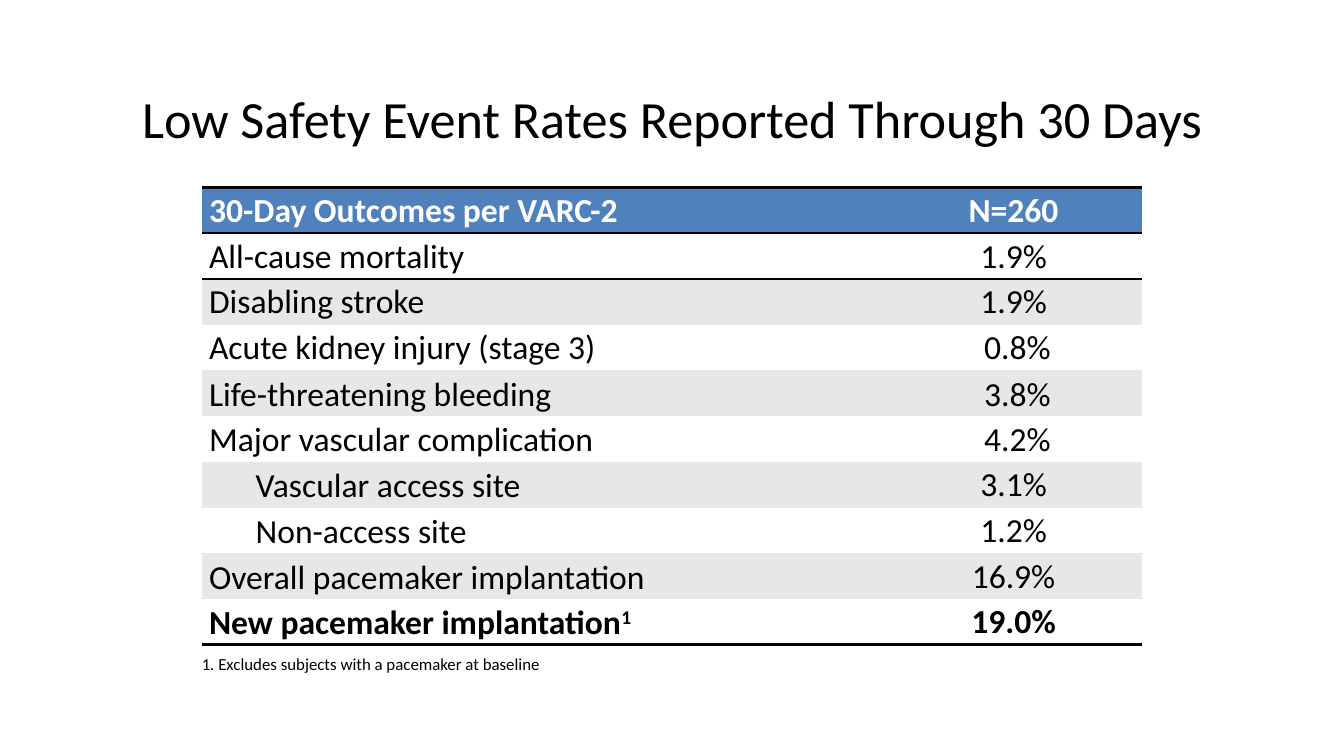
from pptx import Presentation
from pptx.dml.color import RGBColor
from pptx.enum.text import MSO_ANCHOR, PP_ALIGN
from pptx.oxml.ns import qn
from pptx.util import Pt
from lxml import etree

PX = 6350  # 144 px to the inch
LEFT, CENTER = PP_ALIGN.LEFT, PP_ALIGN.CENTER
TOP, MIDDLE = MSO_ANCHOR.TOP, MSO_ANCHOR.MIDDLE
BLACK, WHITE, BLUE, GREY = "000000", "FFFFFF", "4F81BD", "E7E7E7"


def write(frame, text, size=18, color=BLACK, bold=False, align=LEFT,
          spacing=None, indent=0, superscript=""):
    paragraph = frame.paragraphs[0]
    paragraph.alignment = align
    if spacing:
        paragraph.line_spacing = spacing
    if indent:
        paragraph._p.get_or_add_pPr().set("marL", str(indent * PX))
    for part in filter(None, (text, superscript)):
        run = paragraph.add_run()
        run.text = part
        run.font.name = "Calibri"
        run.font.size = Pt(size)
        run.font.bold = bold
        run.font.color.rgb = RGBColor.from_string(color)
    if superscript:
        run.font._element.set("baseline", "30000")


def set_borders(cell, top, bottom):
    properties = cell._tc.get_or_add_tcPr()
    for side, width in (("lnL", 0), ("lnR", 0), ("lnT", top), ("lnB", bottom)):
        line = etree.SubElement(properties, qn(f"a:{side}"), w=str(Pt(width)))
        if width:
            fill = etree.SubElement(line, qn("a:solidFill"))
            etree.SubElement(fill, qn("a:srgbClr"), val=BLACK)
        else:
            etree.SubElement(line, qn("a:noFill"))


prs = Presentation()
prs.slide_width, prs.slide_height = 1440 * PX, 810 * PX
slide = prs.slides.add_slide(prs.slide_layouts[6])

# Title
title = slide.shapes.add_textbox(72 * PX, 58 * PX, 1296 * PX, 135 * PX).text_frame
title.word_wrap = True
title.vertical_anchor = MIDDLE
write(title, "Low Safety Event Rates Reported Through 30 Days", size=28, align=CENTER)

# Outcomes: label, rate, label indent, label anchor, rate anchor, superscript
outcomes = [
    ("30-Day Outcomes per VARC-2", "N=260", 0, TOP, TOP, ""),
    ("All-cause mortality", "1.9%", 0, TOP, TOP, ""),
    ("Disabling stroke", "1.9%", 0, TOP, TOP, ""),
    ("Acute kidney injury (stage 3)", " 0.8%", 0, TOP, TOP, ""),
    ("Life-threatening bleeding", " 3.8%", 0, MIDDLE, MIDDLE, ""),
    ("Major vascular complication", " 4.2%", 0, MIDDLE, MIDDLE, ""),
    ("Vascular access site", "3.1%", 50, MIDDLE, TOP, ""),
    ("Non-access site", "1.2%", 50, MIDDLE, TOP, ""),
    ("Overall pacemaker implantation", "16.9%", 0, MIDDLE, TOP, ""),
    ("New pacemaker implantation", "19.0%", 0, MIDDLE, TOP, "1"),
]
last = len(outcomes) - 1
rule_widths = {0: 2, 1: 1, 2: 1, last + 1: 2}  # rule above each row, in points

# Table
table = slide.shapes.add_table(len(outcomes), 2, 216 * PX, 201 * PX,
                               1008 * PX, 49 * len(outcomes) * PX).table
table.columns[0].width, table.columns[1].width = 732 * PX, 276 * PX
for r, (label, rate, indent, label_anchor, rate_anchor, note) in enumerate(outcomes):
    table.rows[r].height = 49 * PX
    background = BLUE if r == 0 else WHITE if r % 2 else GREY
    for c, anchor in enumerate((label_anchor, rate_anchor)):
        cell = table.cell(r, c)
        cell.margin_left = cell.margin_right = 8 * PX
        cell.margin_top = cell.margin_bottom = 0
        cell.vertical_anchor = anchor
        set_borders(cell, rule_widths.get(r, 0), rule_widths.get(r + 1, 0))
        cell.fill.solid()
        cell.fill.fore_color.rgb = RGBColor.from_string(background)
    style = dict(color=BLACK if r else WHITE, bold=r in (0, last), spacing=1.07)
    write(table.cell(r, 0).text_frame, label, indent=indent, superscript=note, **style)
    write(table.cell(r, 1).text_frame, rate, align=CENTER, **style)

# Footnote
footnote = slide.shapes.add_textbox(202 * PX, 693 * PX, 395 * PX, 36 * PX).text_frame
footnote.word_wrap = False
write(footnote, "1. Excludes subjects with a pacemaker at baseline", size=9)

prs.save("out.pptx")
